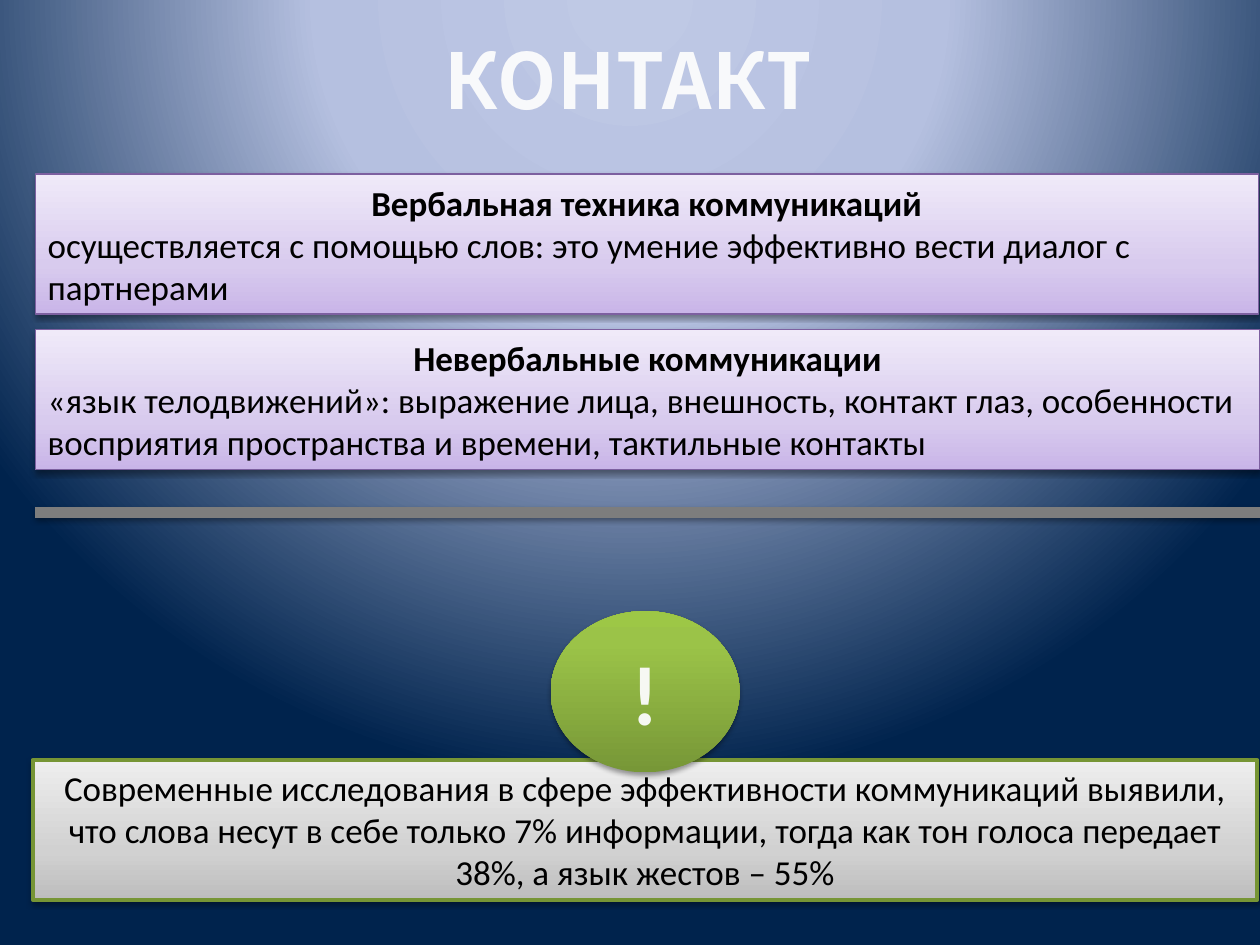
from lxml import etree
from pptx import Presentation
from pptx.dml.color import RGBColor
from pptx.enum.shapes import MSO_CONNECTOR, MSO_SHAPE
from pptx.enum.text import MSO_ANCHOR, MSO_AUTO_SIZE, PP_ALIGN
from pptx.oxml import parse_xml
from pptx.oxml.ns import nsdecls, qn
from pptx.util import Cm, Pt

CENTER, LEFT = PP_ALIGN.CENTER, PP_ALIGN.LEFT
MIDDLE = MSO_ANCHOR.MIDDLE
FIT_SHAPE = MSO_AUTO_SIZE.SHAPE_TO_FIT_TEXT
RECTANGLE, OVAL = MSO_SHAPE.RECTANGLE, MSO_SHAPE.OVAL
STRAIGHT = MSO_CONNECTOR.STRAIGHT

COLORS = {
    "text": "000000",
    "display": "FCFCFD",
    "outline": "101A26",
    "shadow": "000000",
    "violet line": "7D60A0",
    "green line": "769535",
    "divider": "7D7D7D",
}
GRADIENTS = {
    "background": [(0, "BFC9E5"), (40, "B5C0E0"), (100, "00234D")],
    "violet": [(0, "C9B5E8"), (35, "D8CBEE"), (100, "F0EAF9")],
    "gray": [(0, "BDBDBD"), (35, "D1D1D1"), (100, "EEEEEE")],
    "green": [(0, "779737"), (80, "9BC348"), (100, "9DC746")],
}
UPWARD = '<a:lin ang="16200000" scaled="0"/>'
SPOTLIGHT = ('<a:path path="circle">'
             '<a:fillToRect l="50000" t="-80000" r="50000" b="180000"/></a:path>')

BODY = {"size": Pt(20), "name": "Calibri", "bold": False}
HEADING = {**BODY, "bold": True}
TITLE = {"size": Pt(44), "name": "Noto Sans CJK SC", "bold": True}
MARK = {"size": Pt(48), "name": "Calibri", "bold": True}

# Paragraphs are (text, alignment, font format)
TITLE_TEXT = [("КОНТАКТ", CENTER, TITLE)]
STATISTICS = [("Современные исследования в сфере эффективности коммуникаций выявили, "
               "что слова несут в себе только 7% информации, тогда как тон голоса "
               "передает 38%, а язык жестов – 55%", CENTER, BODY)]
VERBAL = [("Вербальная техника коммуникаций", CENTER, HEADING),
          ("осуществляется с помощью слов: это умение эффективно вести диалог "
           "с партнерами", LEFT, BODY)]
NONVERBAL = [("Невербальные коммуникации", CENTER, HEADING),
             ("«язык телодвижений»: выражение лица, внешность, контакт глаз, "
              "особенности восприятия пространства и времени, тактильные контакты",
              LEFT, BODY)]
EXCLAMATION = [("!", CENTER, MARK)]

# Geometry, (left, top, width, height) in cm, gradient, (line colour, points), text
SHAPES = [
    (RECTANGLE, (0.66, 15.32, 24.69, 2.82), "gray", ("green line", 2.25), STATISTICS),
    (RECTANGLE, (0.71, 3.51, 24.66, 2.82), "violet", ("violet line", 0.75), VERBAL),
    (RECTANGLE, (0.71, 6.65, 24.69, 2.82), "violet", ("violet line", 0.75), NONVERBAL),
    (OVAL, (11.1, 12.32, 3.81, 3.25), "green", None, EXCLAMATION),
]
DIVIDER = (0.71, 10.33, 25.4, 10.33)


def rgb(name):
    return RGBColor.from_string(COLORS[name])


def set_gradient(parent, name, direction):
    """Replace the solid fill inside parent with a named gradient."""
    stops = "".join(f'<a:gs pos="{position * 1000}"><a:srgbClr val="{color}"/></a:gs>'
                    for position, color in GRADIENTS[name])
    gradient = parse_xml(f'<a:gradFill {nsdecls("a")} rotWithShape="1">'
                         f'<a:gsLst>{stops}</a:gsLst>{direction}</a:gradFill>')
    parent.replace(parent.find(qn("a:solidFill")), gradient)


def add_shadow(properties):
    effects = properties.find(qn("a:effectLst"))
    if effects is None:
        effects = etree.SubElement(properties, qn("a:effectLst"))
    effects.append(parse_xml(
        f'<a:outerShdw {nsdecls("a")} blurRad="{Pt(3.1)}" dist="{Pt(1.6)}" '
        f'dir="5400000" rotWithShape="0"><a:srgbClr val="{COLORS["shadow"]}">'
        '<a:alpha val="38000"/></a:srgbClr></a:outerShdw>'))


def style_display(run):
    """Give a run wide spacing, a faint outline and a slightly clear fill."""
    run.font.color.rgb = rgb("display")
    properties = run.font._element
    properties.set("spc", "50")
    color = properties.find(qn("a:solidFill")).find(qn("a:srgbClr"))
    etree.SubElement(color, qn("a:alpha")).set("val", "95000")
    properties.insert(0, parse_xml(
        f'<a:ln {nsdecls("a")} w="{Pt(1.06)}"><a:solidFill>'
        f'<a:srgbClr val="{COLORS["outline"]}"><a:alpha val="6000"/></a:srgbClr>'
        '</a:solidFill><a:prstDash val="solid"/></a:ln>'))


def write_text(frame, paragraphs):
    for index, (text, alignment, font_format) in enumerate(paragraphs):
        paragraph = frame.add_paragraph() if index else frame.paragraphs[0]
        paragraph.alignment = alignment
        run = paragraph.add_run()
        run.text = text
        for attribute, value in font_format.items():
            setattr(run.font, attribute, value)
        if font_format in (TITLE, MARK):
            style_display(run)
        else:
            run.font.color.rgb = rgb("text")


def add_panel(slide, geometry, box, gradient, line, paragraphs):
    shape = slide.shapes.add_shape(geometry, *map(Cm, box))
    shape.shadow.inherit = False
    shape.fill.solid()
    set_gradient(shape._element.spPr, gradient, UPWARD)
    if line:
        color, width = line
        shape.line.color.rgb = rgb(color)
        shape.line.width = Pt(width)
    else:
        shape.line.fill.background()
    add_shadow(shape._element.spPr)
    write_text(shape.text_frame, paragraphs)
    shape.text_frame.word_wrap = True
    shape.text_frame.auto_size = FIT_SHAPE


def add_divider(slide):
    divider = slide.shapes.add_connector(STRAIGHT, *map(Cm, DIVIDER))
    divider.line.color.rgb = rgb("divider")
    divider.line.width = Pt(6)
    add_shadow(divider._element.spPr)


def main():
    presentation = Presentation()
    presentation.slide_width, presentation.slide_height = Cm(25.4), Cm(19.05)
    slide = presentation.slides.add_slide(presentation.slide_layouts[5])

    slide.background.fill.solid()
    set_gradient(slide.element.find(".//" + qn("p:bgPr")), "background", SPOTLIGHT)

    title = slide.shapes.title
    title.left, title.top, title.width, title.height = map(Cm, (1.27, 0.33, 22.86, 2.51))
    title.text_frame.vertical_anchor = MIDDLE
    write_text(title.text_frame, TITLE_TEXT)

    for panel in SHAPES:
        add_panel(slide, *panel)
    add_divider(slide)
    presentation.save("out.pptx")


if __name__ == "__main__":
    main()
